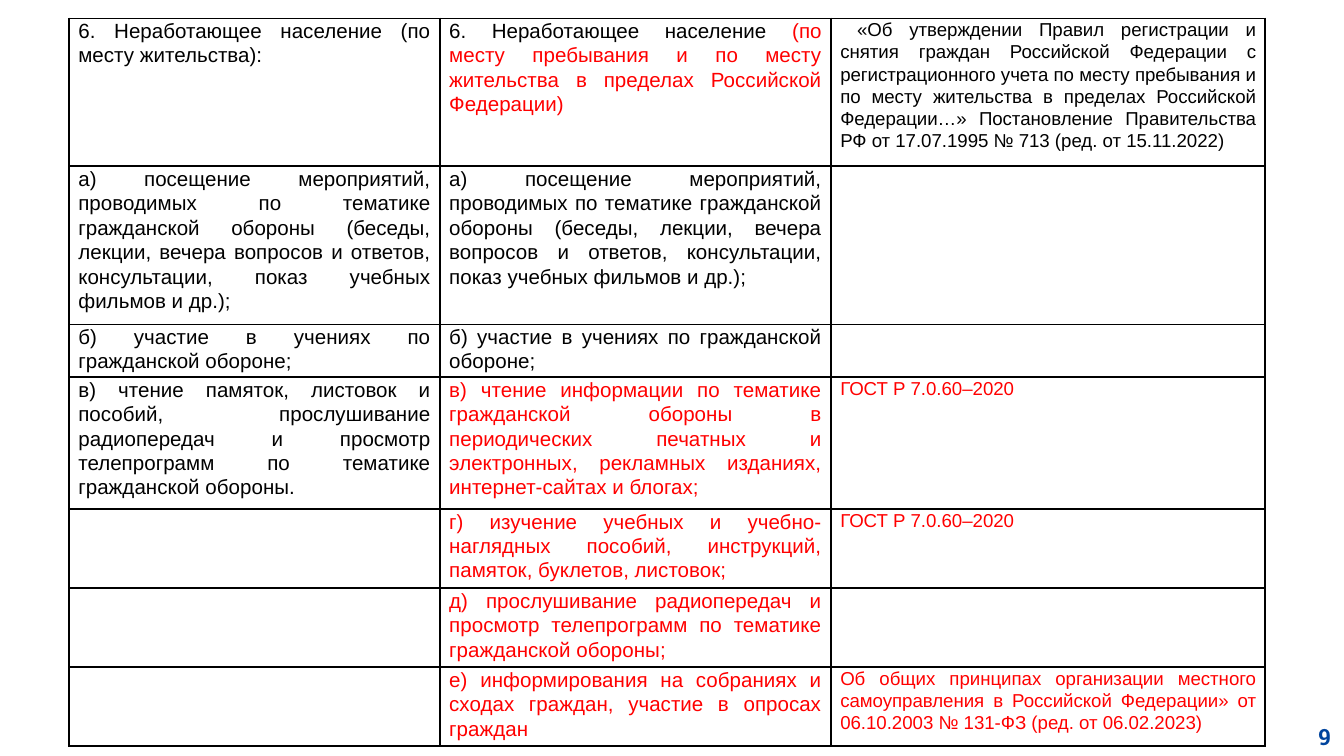
import lxml.etree
import pptx
import pptx.dml.color
import pptx.enum.text
import pptx.oxml.ns
import pptx.util

Pt = pptx.util.Pt
ALIGN = pptx.enum.text.PP_ALIGN

COLORS = {"black": "000000", "red": "FF0000", "blue": "00449E"}
COLUMN_WIDTHS = [198.7, 209.5, 232.6]
ROW_HEIGHTS = [79.2, 78, 26, 65, 39, 39, 39]
COLUMN_SIZES = [11, 11, 10]

EVENTS = (
    "а) посещение мероприятий, проводимых по тематике гражданской обороны "
    "(беседы, лекции, вечера вопросов и ответов, консультации, показ учебных "
    "фильмов и др.);"
)
EXERCISES = "б) участие в учениях по гражданской обороне;"
STANDARD = "ГОСТ Р 7.0.60–2020"

ROWS = [
    [
        [("6. Неработающее население (по месту жительства):", "black")],
        [
            ("6. Неработающее население ", "black"),
            ("(по месту пребывания и по месту жительства в пределах "
             "Российской Федерации)", "red"),
        ],
        [(" «Об утверждении Правил регистрации и снятия граждан Российской "
          "Федерации с регистрационного учета по месту пребывания и по месту "
          "жительства в пределах Российской Федерации…» Постановление "
          "Правительства РФ от 17.07.1995 № 713 (ред. от 15.11.2022)", "black")],
    ],
    [[(EVENTS, "black")], [(EVENTS, "black")], []],
    [[(EXERCISES, "black")], [(EXERCISES, "black")], []],
    [
        [("в) чтение памяток, листовок и пособий, прослушивание радиопередач и "
          "просмотр телепрограмм по тематике гражданской обороны.", "black")],
        [("в) чтение информации по тематике гражданской обороны в периодических "
          "печатных и электронных, рекламных изданиях, интернет-сайтах и "
          "блогах; ", "red")],
        [(STANDARD, "red")],
    ],
    [
        [],
        [("г) изучение учебных и учебно-наглядных пособий, инструкций, памяток, "
          "буклетов, листовок; ", "red")],
        [(STANDARD, "red")],
    ],
    [
        [],
        [("д) прослушивание радиопередач и просмотр телепрограмм по тематике "
          "гражданской обороны;", "red")],
        [],
    ],
    [
        [],
        [("е) информирования на собраниях и сходах граждан, участие в опросах "
          "граждан", "red")],
        [("Об общих принципах организации местного самоуправления в Российской "
          "Федерации» от 06.10.2003 № 131-ФЗ (ред. от 06.02.2023)", "red")],
    ],
]


def add_run(paragraph, text, size, color, font="Arial", bold=False):
    run = paragraph.add_run()
    run.text = text
    run.font.size = Pt(size)
    run.font.name = font
    run.font.bold = bold
    run.font.color.rgb = pptx.dml.color.RGBColor.from_string(COLORS[color])


def add_borders(cell):
    qn = pptx.oxml.ns.qn
    properties = cell._tc.get_or_add_tcPr()
    for position, side in enumerate(("a:lnL", "a:lnR", "a:lnT", "a:lnB")):
        line = lxml.etree.Element(qn(side), w=str(Pt(1)))
        fill = lxml.etree.SubElement(line, qn("a:solidFill"))
        lxml.etree.SubElement(fill, qn("a:srgbClr"), val=COLORS["black"])
        properties.insert(position, line)


def fill_cell(cell, runs, size):
    cell.margin_left = cell.margin_right = Pt(5)
    cell.margin_top = cell.margin_bottom = Pt(0)
    cell.fill.background()
    add_borders(cell)
    paragraph = cell.text_frame.paragraphs[0]
    paragraph.alignment = ALIGN.JUSTIFY
    paragraph.line_spacing = 1.07
    for text, color in runs:
        add_run(paragraph, text, size, color)


def add_comparison_table(slide):
    shape = slide.shapes.add_table(
        len(ROWS), len(COLUMN_WIDTHS), Pt(37), Pt(9.8),
        Pt(sum(COLUMN_WIDTHS)), Pt(sum(ROW_HEIGHTS)))
    table = shape.table
    table.first_row = False
    table.horz_banding = False
    for column, width in zip(table.columns, COLUMN_WIDTHS):
        column.width = Pt(width)
    for row, height, contents in zip(table.rows, ROW_HEIGHTS, ROWS):
        row.height = Pt(height)
        for cell, runs, size in zip(row.cells, contents, COLUMN_SIZES):
            fill_cell(cell, runs, size)


def add_page_number(slide, number):
    shape = slide.shapes.add_textbox(Pt(677.5), Pt(383.8), Pt(42.5), Pt(20.9))
    shape.text_frame.word_wrap = True
    paragraph = shape.text_frame.paragraphs[0]
    paragraph.alignment = ALIGN.RIGHT
    add_run(paragraph, number, 12, "blue", "Roboto Slab", True)


def main():
    presentation = pptx.Presentation()
    presentation.slide_width = Pt(720)
    presentation.slide_height = Pt(405)
    slide = presentation.slides.add_slide(presentation.slide_layouts[6])
    add_page_number(slide, "9")
    add_comparison_table(slide)
    presentation.save("out.pptx")


if __name__ == "__main__":
    main()
